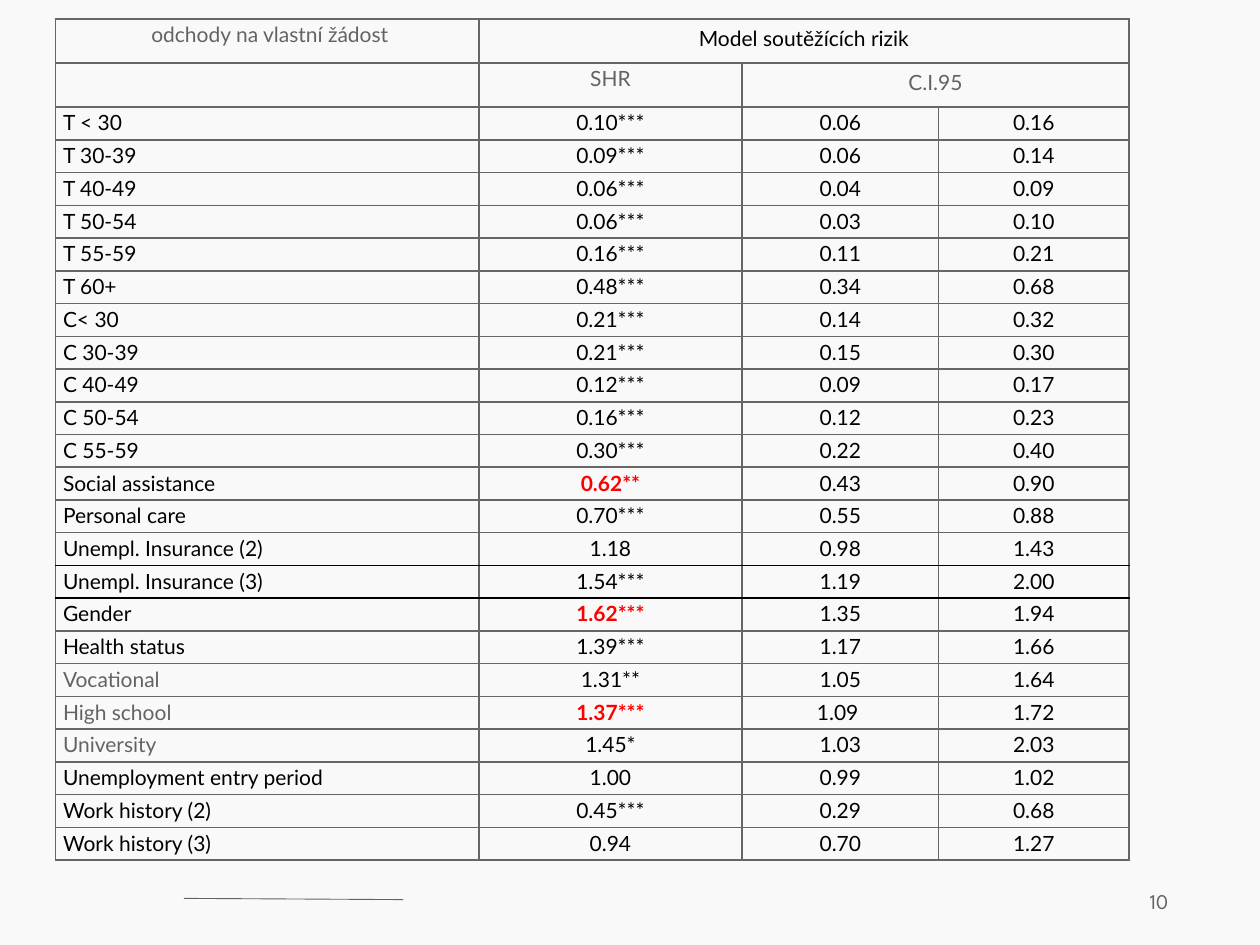
"""Build the slide with the competing risks model table."""
from lxml.etree import SubElement
from pptx import Presentation
from pptx.dml.color import RGBColor
from pptx.enum.shapes import MSO_CONNECTOR
from pptx.enum.text import MSO_ANCHOR, PP_ALIGN as AL
from pptx.oxml.ns import qn
from pptx.util import Inches, Pt

C = {"bg": "F9F9F9", "grey": "636363", "border": "666666", "black": "000000", "red": "FF0000"}


def write(tf, text, color="black", bold=False, align=AL.CENTER, font="Lato", spacing=1.07, after=3):
    p = tf.paragraphs[0]
    p.alignment = align
    p.line_spacing = spacing
    p.space_after = Pt(after)
    r = p.add_run()
    r.text = text
    r.font.name = font
    r.font.size = Pt(12)
    r.font.bold = bold
    r.font.color.rgb = RGBColor.from_string(C[color])


def set_border(cell, **sides):
    tcPr = cell._tc.get_or_add_tcPr()
    for side in "LRTB":
        ln = SubElement(tcPr, qn(f"a:ln{side}"), w=str(Pt(1)))
        fill = SubElement(ln, qn("a:solidFill"))
        SubElement(fill, qn("a:srgbClr"), val=C[sides.get(side, "border")])


rows = [
    ("\N{NO-BREAK SPACE}odchody na vlastní žádost", "Model soutěžících rizik", "", ""),
    ("", "SHR", "C.I.95", ""),
    ("T < 30", "0.10***", "0.06", "0.16"),
    ("T 30-39", "0.09***", "0.06", "0.14"),
    ("T 40-49", "0.06***", "0.04", "0.09"),
    ("T 50-54", "0.06***", "0.03", "0.10"),
    ("T 55-59", "0.16***", "0.11", "0.21"),
    ("T 60+", "0.48***", "0.34", "0.68"),
    ("C< 30", "0.21***", "0.14", "0.32"),
    ("C 30-39", "0.21***", "0.15", "0.30"),
    ("C 40-49", "0.12***", "0.09", "0.17"),
    ("C 50-54", "0.16***", "0.12", "0.23"),
    ("C 55-59", "0.30***", "0.22", "0.40"),
    ("Social assistance", "0.62**", "0.43", "0.90"),
    ("Personal care", "0.70***", "0.55", "0.88"),
    ("Unempl. Insurance (2)", "1.18", "0.98", "1.43"),
    ("Unempl. Insurance (3)", "1.54***", "1.19", "2.00"),
    ("Gender", "1.62***", "1.35", "1.94"),
    ("Health status", "1.39***", "1.17", "1.66"),
    ("Vocational", "1.31**", "1.05", "1.64"),
    ("High school", "1.37***", "1.09 ", "1.72"),
    ("University", "1.45*", "1.03", "2.03"),
    ("Unemployment entry period", "1.00", "0.99", "1.02"),
    ("Work history (2)", "0.45***", "0.29", "0.68"),
    ("Work history (3)", "0.94", "0.70", "1.27"),
]
grey_texts = {rows[0][0], "SHR", "C.I.95", "Vocational", "High school", "University"}
red_rows = {"Social assistance", "Gender", "High school"}
wide_texts = {"Model soutěžících rizik", "C.I.95"}
black_below = {"Unempl. Insurance (2)", "Unempl. Insurance (3)"}

prs = Presentation()
prs.slide_width, prs.slide_height = Inches(10), Inches(7.5)
s = prs.slides.add_slide(prs.slide_layouts[6])
s.background.fill.solid()
s.background.fill.fore_color.rgb = RGBColor.from_string(C["bg"])

line = s.shapes.add_connector(MSO_CONNECTOR.STRAIGHT, Inches(1.46), Inches(7.13), Inches(3.2), Inches(7.14))
line.line.color.rgb = RGBColor.from_string(C["grey"])
line.line.width = Pt(0.5)
SubElement(line._element.spPr, qn("a:effectLst"))

sp = s.shapes.add_textbox(Inches(7.12), Inches(6.95), Inches(2.25), Inches(0.4))
sp.text_frame.word_wrap = True
sp.text_frame.vertical_anchor = MSO_ANCHOR.MIDDLE
write(sp.text_frame, "10", color="grey", align=AL.RIGHT, font="League Spartan", spacing=1.0, after=6)

table = s.shapes.add_table(len(rows), 4, Inches(0.44), Inches(0.15), Inches(8.52), Inches(6.67)).table
table.first_row = table.horz_banding = False
for col, width in zip(table.columns, (3.36, 2.09, 1.56, 1.51)):
    col.width = Inches(width)

for i, row in enumerate(rows):
    table.rows[i].height = Inches(0.35 if i < 2 else 0.26)
    above = rows[i - 1][0] if i else ""
    for j, text in enumerate(row):
        cell = table.cell(i, j)
        wide = text in wide_texts
        cell.margin_left = cell.margin_right = Inches(0.08 if wide else 0.06)
        cell.margin_top = Inches(0.04 if wide else 0.01)
        cell.margin_bottom = Inches(0.04 if wide else 0)
        set_border(cell, T="black" if above in black_below else "border",
                   B="black" if row[0] in black_below else "border")
        cell.fill.background()
        red = j == 1 and row[0] in red_rows
        write(cell.text_frame, text, bold=red,
              color="red" if red else "grey" if text in grey_texts else "black",
              align=AL.JUSTIFY if j == 0 and i > 1 else AL.CENTER)

table.cell(0, 1).merge(table.cell(0, 3))
table.cell(1, 2).merge(table.cell(1, 3))

prs.save("out.pptx")
